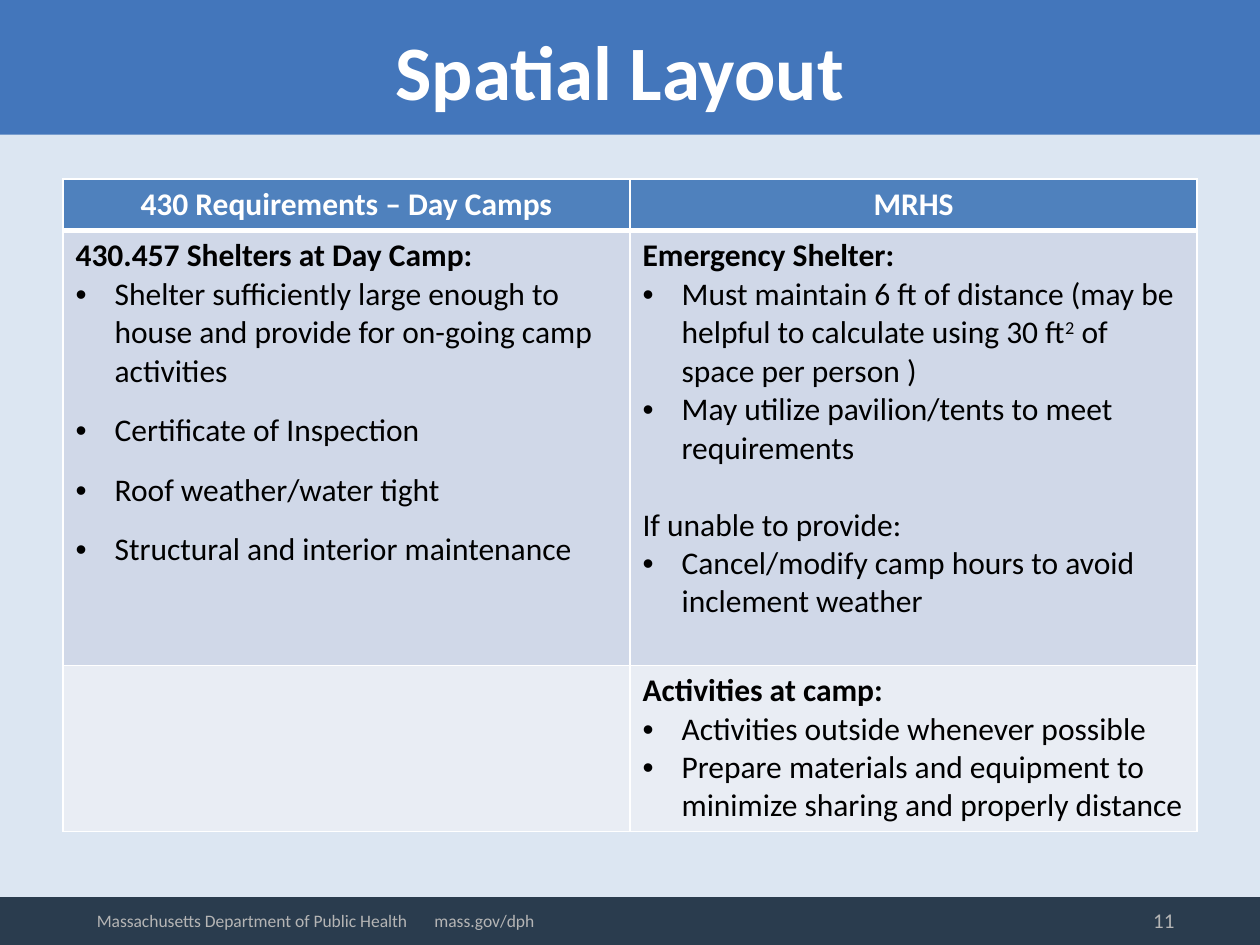
"""Build the Spatial Layout slide comparing day camp rules with MRHS."""
from lxml import etree
from pptx import Presentation
from pptx.dml.color import RGBColor
from pptx.enum import shapes, text
from pptx.oxml import ns
from pptx.util import Inches, Pt

WHITE = RGBColor(0xFF, 0xFF, 0xFF)
BLACK = RGBColor(0, 0, 0)
GRAY = RGBColor(0xB5, 0xB5, 0xB5)
SKY = RGBColor(0xDC, 0xE6, 0xF2)
BLUE = RGBColor(0x43, 0x76, 0xBB)
NAVY = RGBColor(0x2A, 0x3C, 0x4E)
ROW_FILLS = [RGBColor(0x4F, 0x81, 0xBD), RGBColor(0xD0, 0xD8, 0xE8), RGBColor(0xE9, 0xED, 0xF4)]
LEFT, CENTER, RIGHT = text.PP_ALIGN.LEFT, text.PP_ALIGN.CENTER, text.PP_ALIGN.RIGHT


def write(paragraph, content, size=18, color=BLACK, bold=False, align=LEFT,
          bullet=False, before=0, after=0, tab=None):
    """Fill a paragraph; a part between bars is set as superscript."""
    paragraph.alignment = align
    paragraph.space_before, paragraph.space_after = Pt(before), Pt(after)
    props = paragraph._p.get_or_add_pPr()
    if bullet:
        props.set("marL", str(Inches(0.31)))
        props.set("indent", str(-Inches(0.31)))
        etree.SubElement(props, ns.qn("a:buFont"), typeface="Arial")
        etree.SubElement(props, ns.qn("a:buChar"), char="•")
    if tab:
        stops = etree.SubElement(props, ns.qn("a:tabLst"))
        etree.SubElement(stops, ns.qn("a:tab"), pos=str(tab), algn="l")
    for index, part in enumerate(content.split("|")):
        run = paragraph.add_run()
        run.text = part
        run.font.name, run.font.size, run.font.bold = "Calibri", Pt(size), bold
        run.font.color.rgb = color
        if index % 2:
            run._r.get_or_add_rPr().set("baseline", "30000")


deck = Presentation()
deck.slide_width, deck.slide_height = Inches(10), Inches(7.5)
slide = deck.slides.add_slide(deck.slide_layouts[5])
slide.background.fill.solid()
slide.background.fill.fore_color.rgb = SKY

for top, height, color in [(0, 1.07, BLUE), (7.12, 0.38, NAVY)]:
    band = slide.shapes.add_shape(
        shapes.MSO_SHAPE.RECTANGLE, 0, Inches(top), Inches(10), Inches(height))
    band.shadow.inherit = False
    band.fill.solid()
    band.fill.fore_color.rgb = color
    band.line.fill.background()

title = slide.shapes.title
title.left, title.top, title.width, title.height = map(Inches, (0.42, 0.08, 9, 0.95))
title.text_frame.vertical_anchor = text.MSO_ANCHOR.MIDDLE
write(title.text_frame.paragraphs[0], "Spatial Layout",
      size=44, color=WHITE, bold=True, align=CENTER)
title.element.getparent().append(title.element)

heading = dict(color=WHITE, bold=True, align=CENTER)
topic = dict(bold=True)
item = dict(bullet=True)
spaced = dict(bullet=True, after=12)
rows = [
    [[("430 Requirements – Day Camps", heading)], [("MRHS", heading)]],
    [
        [("430.457 Shelters at Day Camp:", topic),
         ("Shelter sufficiently large enough to house and provide for on-going camp activities", spaced),
         ("Certificate of Inspection", spaced),
         ("Roof weather/water tight", spaced),
         ("Structural and interior maintenance", spaced)],
        [("Emergency Shelter:", topic),
         ("Must maintain 6 ft of distance (may be helpful to calculate using "
          "30 ft|2| of space per person )", item),
         ("May utilize pavilion/tents to meet requirements", item),
         ("If unable to provide:", dict(before=22)),
         ("Cancel/modify camp hours to avoid inclement weather", item)],
    ],
    [
        [],
        [("Activities at camp:", topic),
         ("Activities outside whenever possible", item),
         ("Prepare materials and equipment to minimize sharing and properly distance", item)],
    ],
]
comparison = slide.shapes.add_table(
    3, 2, Inches(0.5), Inches(1.42), Inches(9), Inches(5.18)).table
for row, height in zip(comparison.rows, (0.41, 3.45, 1.32)):
    row.height = Inches(height)

for r, row in enumerate(rows):
    for c, entries in enumerate(row):
        cell = comparison.cell(r, c)
        cell_props = cell._tc.get_or_add_tcPr()
        for side in ("lnL", "lnR", "lnT", "lnB"):
            thick = (r, side) in [(0, "lnB"), (1, "lnT")]
            border = etree.SubElement(
                cell_props, ns.qn(f"a:{side}"), w=str(Pt(3 if thick else 1)))
            paint = etree.SubElement(border, ns.qn("a:solidFill"))
            etree.SubElement(paint, ns.qn("a:srgbClr"), val=str(WHITE))
        cell.fill.solid()
        cell.fill.fore_color.rgb = ROW_FILLS[r]
        for index, (content, style) in enumerate(entries):
            frame = cell.text_frame
            write(frame.add_paragraph() if index else frame.paragraphs[0], content, **style)

footers = [
    ((7.18, 7.1, 2.24, 0.4), "11", dict(size=12, align=RIGHT)),
    ((0.67, 7.12, 4.17, 0.37), "Massachusetts Department of Public Health\tmass.gov/dph",
     dict(size=10, tab=Inches(2.68))),
]
for box, content, style in footers:
    footer = slide.shapes.add_textbox(*map(Inches, box)).text_frame
    footer.word_wrap = True
    footer.vertical_anchor = text.MSO_ANCHOR.MIDDLE
    write(footer.paragraphs[0], content, color=GRAY, **style)

deck.save("out.pptx")
